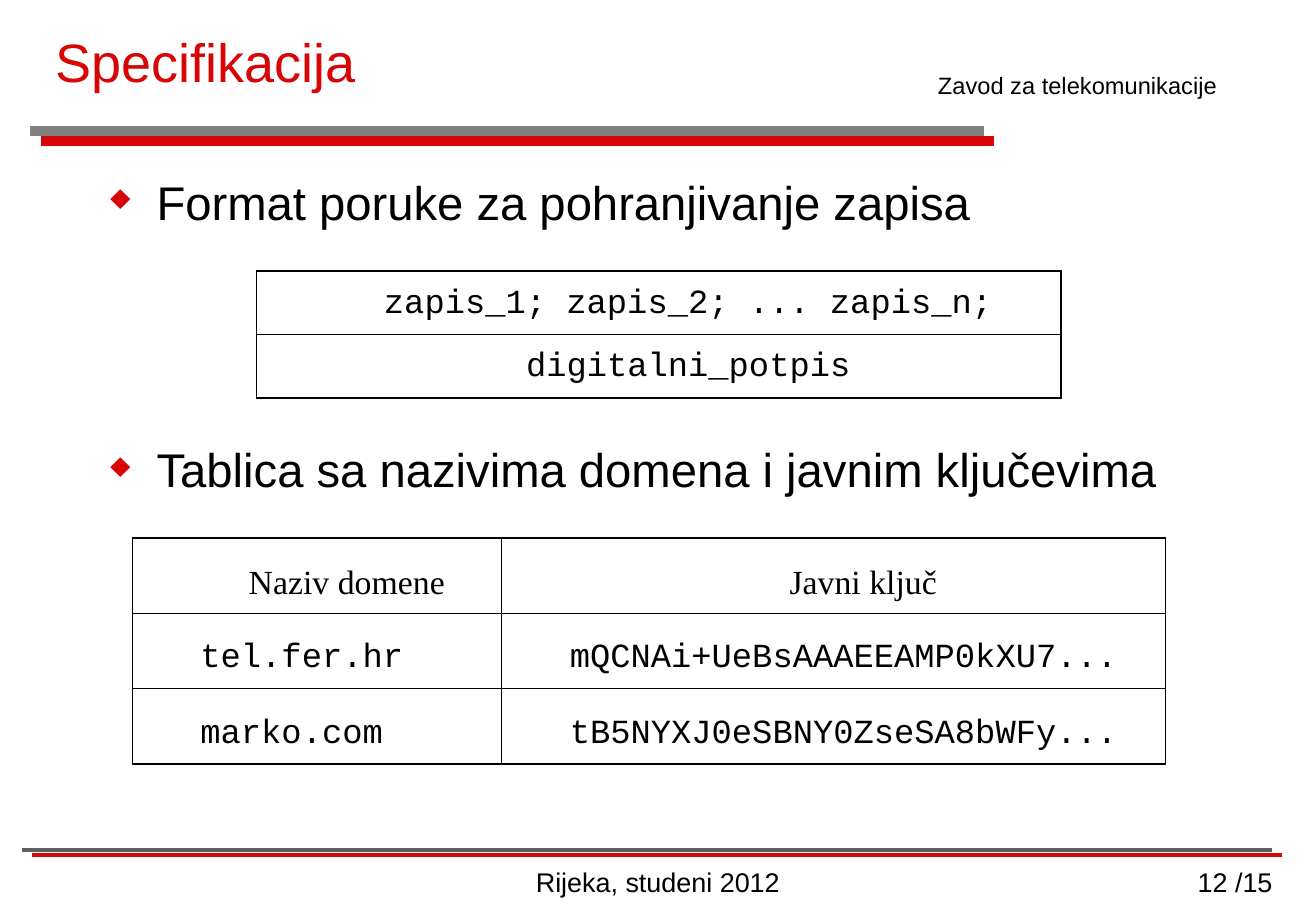
from lxml.etree import SubElement
from pptx import Presentation
from pptx.dml.color import RGBColor
from pptx.enum.shapes import MSO_CONNECTOR
from pptx.enum.text import MSO_ANCHOR, PP_ALIGN
from pptx.oxml import parse_xml
from pptx.oxml.ns import nsdecls, qn
from pptx.util import Inches, Pt

WIDTH, HEIGHT = Inches(10.83), Inches(7.5)
COLORS = {"black": "000000", "red": "D70505", "gray": "808080", "dark": "5F5F5F"}
INDENT = Inches(0.49)
BULLET_INDENT = Inches(0.38)


def x(percent):
    return round(WIDTH * percent / 100)


def y(percent):
    return round(HEIGHT * percent / 100)


def rgb(name):
    return RGBColor.from_string(COLORS[name])


def add_run(p, text, size, font="Arial", color="black"):
    r = p.add_run()
    r.text = text
    r.font.size = Pt(size)
    r.font.name = font
    r.font.color.rgb = rgb(color)


def add_box(s, left, top, width, height, anchor=MSO_ANCHOR.TOP):
    tf = s.shapes.add_textbox(x(left), y(top), x(width), y(height)).text_frame
    tf.word_wrap = True
    tf.vertical_anchor = anchor
    return tf


def add_label(s, box, text, size, align=PP_ALIGN.LEFT, color="black", anchor=MSO_ANCHOR.TOP):
    p = add_box(s, *box, anchor).paragraphs[0]
    p.alignment = align
    add_run(p, text, size, color=color)


def add_bullets(s, box, items, gap):
    tf = add_box(s, *box)
    for i, text in enumerate(items):
        p = tf.add_paragraph() if i else tf.paragraphs[0]
        pPr = p._p.get_or_add_pPr()
        pPr.set("marL", str(BULLET_INDENT))
        pPr.set("indent", str(-BULLET_INDENT))
        SubElement(SubElement(pPr, qn("a:buClr")), qn("a:srgbClr"), val=COLORS["red"])
        SubElement(pPr, qn("a:buSzPct"), val="75000")
        SubElement(pPr, qn("a:buChar"), char="♦")
        if i:
            p.space_before = Pt(gap)
        add_run(p, text, 28)


def add_line(s, left, right, top, color, width):
    line = s.shapes.add_connector(MSO_CONNECTOR.STRAIGHT, x(left), y(top), x(right), y(top))
    line.line.color.rgb = rgb(color)
    line.line.width = Pt(width)
    SubElement(line._element.spPr, qn("a:effectLst"))


def add_double_line(s, left, right, top, color, width, dx, dy):
    add_line(s, left + dx, right + dx, top + dy, "red", width)
    add_line(s, left, right, top, color, width)


def set_borders(cell):
    tcPr = cell._tc.get_or_add_tcPr()
    for i, side in enumerate("LRTB"):
        tcPr.insert(i, parse_xml(
            f'<a:ln{side} {nsdecls("a")} w="{Pt(1)}"><a:solidFill>'
            f'<a:srgbClr val="{COLORS["black"]}"/></a:solidFill></a:ln{side}>'))


def fill_cell(cell, text, font, align, spacing, margins):
    cell.fill.background()
    cell.margin_left = cell.margin_right = Inches(margins[0])
    cell.margin_top = cell.margin_bottom = Inches(margins[1])
    set_borders(cell)
    p = cell.text_frame.paragraphs[0]
    p.alignment = align
    p.line_spacing = spacing
    pPr = p._p.get_or_add_pPr()
    pPr.set("marL", "0")
    pPr.set("indent", str(INDENT))
    SubElement(SubElement(pPr, qn("a:tabLst")), qn("a:tab"), pos=str(INDENT), algn="l")
    add_run(p, text, 20, font)


def add_grid(s, left, top, cols, row, rows, spacing, margins):
    table = s.shapes.add_table(len(rows), len(cols), x(left), y(top),
                               x(sum(cols)), y(row * len(rows))).table
    table.first_row = table.horz_banding = False
    for column, width in zip(table.columns, cols):
        column.width = x(width)
    for i, (texts, font, align) in enumerate(rows):
        table.rows[i].height = y(row)
        for j, text in enumerate(texts):
            fill_cell(table.cell(i, j), text, font, align, spacing, margins)


def main():
    prs = Presentation()
    prs.slide_width, prs.slide_height = WIDTH, HEIGHT
    s = prs.slides.add_slide(prs.slide_layouts[6])

    add_double_line(s, 2.31, 74.79, 14.4, "gray", 6, 0.77, 1.11)
    add_double_line(s, 1.66, 96.68, 93.33, "dark", 2.25, 0.77, 0.56)
    add_label(s, (70.36, 7.07, 25.21, 4.53), "Zavod za telekomunikacije", 14)
    add_label(s, (3.32, 0, 65.93, 13.33), "Specifikacija", 32,
              color="red", anchor=MSO_ANCHOR.MIDDLE)
    add_bullets(s, (7.48, 18.33, 85.04, 71.67),
                ["Format poruke za pohranjivanje zapisa",
                 "Tablica sa nazivima domena i javnim ključevima"], 125)
    add_label(s, (36.93, 94.4, 26.13, 5.6), "Rijeka, studeni 2012", 16, PP_ALIGN.CENTER)
    add_label(s, (76.73, 94.4, 20.87, 5.6), "12 /15", 16, PP_ALIGN.RIGHT)

    code, center, justify = "Courier New", PP_ALIGN.CENTER, PP_ALIGN.JUSTIFY
    add_grid(s, 19.48, 29.73, [61.13], 6.67, [
        (["zapis_1; zapis_2; ... zapis_n;"], code, center),
        (["digitalni_potpis"], code, center),
    ], 1.15, (0.1, 0.07))
    add_grid(s, 10.06, 59.07, [28.07, 50.42], 8.09, [
        (["Naziv domene", "Javni ključ"], "Times New Roman", center),
        (["tel.fer.hr", "mQCNAi+UeBsAAAEEAMP0kXU7..."], code, justify),
        (["marko.com", "tB5NYXJ0eSBNY0ZseSA8bWFy..."], code, justify),
    ], 1.5, (0.07, 0.06))
    prs.save("out.pptx")


if __name__ == "__main__":
    main()
